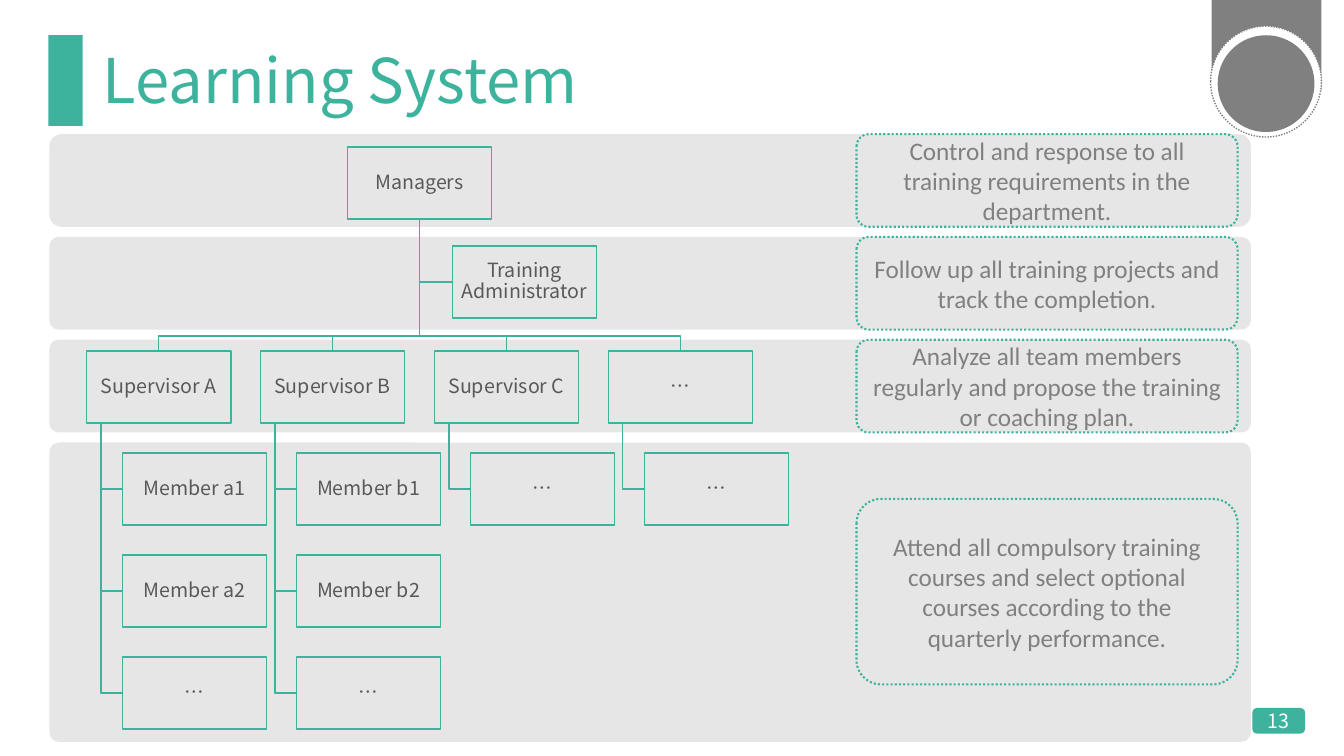
from pptx import Presentation
from pptx.dml.color import RGBColor
from pptx.enum.dml import MSO_LINE
from pptx.enum.shapes import MSO_SHAPE
from pptx.enum.text import MSO_ANCHOR, PP_ALIGN
from pptx.oxml import parse_xml
from pptx.oxml.ns import nsdecls
from pptx.util import Pt

# Content
TITLE = "Learning System"
PAGE_NUMBER = "13"
MANAGER = "Managers"
ADMINISTRATOR = "Training Administrator"
TEAMS = [
    ("Supervisor A", ["Member a1", "Member a2", "…"]),
    ("Supervisor B", ["Member b1", "Member b2", "…"]),
    ("Supervisor C", ["…"]),
    ("…", ["…"]),
]
DUTIES = [
    "Control and response to all training requirements in the department.",
    "Follow up all training projects and track the completion.",
    "Analyze all team members regularly and propose the training or coaching plan.",
    "Attend all compulsory training courses and select optional courses "
    "according to the quarterly performance.",
]

# Style
TEAL = RGBColor(0x3D, 0xB3, 0x9E)
GRAY = RGBColor(0x80, 0x80, 0x80)
DARK = RGBColor(0x59, 0x59, 0x59)
BAND = RGBColor(0xE7, 0xE6, 0xE6)
WHITE = RGBColor(0xFF, 0xFF, 0xFF)
NOTO, CALIBRI = "Noto Sans CJK SC", "Calibri"

# Layout, in points
BAND_LEFT, BAND_TOP, BAND_W, BAND_H, BAND_PITCH = 35.3, 95.8, 858.2, 66.2, 73.44
LAST_BAND_H = 213.8
DUTY_LEFT, DUTY_W, LAST_DUTY_TOP, LAST_DUTY_H = 611.8, 272.2, 356.4, 132.5
BOX_W, BOX_H = 103, 51.4
MANAGER_LEFT, MANAGER_TOP = 248.2, 105.1
ADMIN_LEFT, ADMIN_TOP = 323.2, 175.7
TEAM_LEFT, TEAM_TOP, TEAM_PITCH = 61.9, 250.7, 124.2
MEMBER_INDENT, MEMBER_TOP, MEMBER_PITCH = 25.7, 323.6, 72.9
STEM_INDENT, BUS_Y = 10.3, 239.9

prs = Presentation()
prs.slide_width, prs.slide_height = Pt(960), Pt(540)
slide = prs.slides.add_slide(prs.slide_layouts[5])


def set_font(paragraph, face, size, color):
    for run in paragraph.runs:
        run.font.name, run.font.size = face, Pt(size)
        run.font.color.rgb = color
        latin = run.font._element.find("{*}latin")
        latin.addnext(parse_xml(f'<a:ea {nsdecls("a")} typeface="{face}"/>'))


def style_outline(part, line, width=1.0, dash=None):
    part.shadow.inherit = False
    if line is None:
        part.line.fill.background()
        return
    part.line.color.rgb, part.line.width = line, Pt(width)
    if dash:
        part.line.dash_style = dash


def add_part(kind, left, top, width, height, fill=None, line=None,
             line_width=1.0, dash=None, corner=None):
    part = slide.shapes.add_shape(kind, Pt(left), Pt(top), Pt(width), Pt(height))
    if corner is not None:
        part.adjustments[0] = corner
    if fill is None:
        part.fill.background()
    else:
        part.fill.solid()
        part.fill.fore_color.rgb = fill
    style_outline(part, line, line_width, dash)
    return part


def write(part, text, face, size, color, inset=None, spacing=None):
    frame = part.text_frame
    frame.text = text
    frame.word_wrap, frame.vertical_anchor = True, MSO_ANCHOR.MIDDLE
    if inset is not None:
        frame.margin_left = frame.margin_right = Pt(inset)
        frame.margin_top = frame.margin_bottom = Pt(inset)
    paragraph = frame.paragraphs[0]
    paragraph.alignment = PP_ALIGN.CENTER
    if spacing:
        paragraph.line_spacing = spacing
    set_font(paragraph, face, size, color)


def add_role(text, left, top):
    role = add_part(MSO_SHAPE.RECTANGLE, left, top, BOX_W, BOX_H, line=TEAL)
    write(role, text, NOTO, 14, DARK, inset=0.7, spacing=0.9)


def add_branch(*points):
    corners = [(Pt(x), Pt(y)) for x, y in points]
    builder = slide.shapes.build_freeform(*corners[0])
    builder.add_line_segments(corners[1:], close=False)
    branch = builder.convert_to_shape()
    branch.fill.background()
    style_outline(branch, TEAL)


# Page furniture
badge = add_part(MSO_SHAPE.ROUNDED_RECTANGLE, 895, 506.2, 36.7, 17.3, TEAL, TEAL)
write(badge, PAGE_NUMBER, NOTO, 14, WHITE, inset=0)
add_part(MSO_SHAPE.RECTANGLE, 34.6, 25.2, 24.5, 64.8, TEAL)
add_part(MSO_SHAPE.RECTANGLE, 865.4, -0.7, 78.5, 65.5, GRAY)
add_part(MSO_SHAPE.OVAL, 864.7, 18.7, 79.2, 79.2, WHITE, GRAY, dash=MSO_LINE.ROUND_DOT)
add_part(MSO_SHAPE.OVAL, 869.8, 25.2, 69.1, 69.1, GRAY)

# Level bands
last = len(DUTIES) - 1
band_tops = [BAND_TOP + i * BAND_PITCH for i in range(len(DUTIES))]
for i, (top, corner) in enumerate(zip(band_tops, (0.132, 0.098, 0.098, 0.033))):
    height = LAST_BAND_H if i == last else BAND_H
    add_part(MSO_SHAPE.ROUNDED_RECTANGLE, BAND_LEFT, top, BAND_W, height,
             BAND, corner=corner)

# Title
title = slide.shapes.title
title.left, title.top, title.width, title.height = Pt(66.2), Pt(28.8), Pt(828), Pt(61.2)
write(title, TITLE, NOTO, 44, TEAL, spacing=0.9)
title.text_frame.paragraphs[0].alignment = PP_ALIGN.LEFT

# Organisation chart: branches first, boxes above them
trunk_x, trunk_y = MANAGER_LEFT + BOX_W / 2, MANAGER_TOP + BOX_H
admin_y = ADMIN_TOP + BOX_H / 2
add_branch((trunk_x, trunk_y), (trunk_x, admin_y), (ADMIN_LEFT, admin_y))
roles = [(MANAGER, MANAGER_LEFT, MANAGER_TOP), (ADMINISTRATOR, ADMIN_LEFT, ADMIN_TOP)]
for column, (supervisor, members) in enumerate(TEAMS):
    left = TEAM_LEFT + column * TEAM_PITCH
    center, stem = left + BOX_W / 2, left + STEM_INDENT
    add_branch((trunk_x, trunk_y), (trunk_x, BUS_Y), (center, BUS_Y), (center, TEAM_TOP))
    roles.append((supervisor, left, TEAM_TOP))
    for row, member in enumerate(members):
        member_left, top = left + MEMBER_INDENT, MEMBER_TOP + row * MEMBER_PITCH
        middle = top + BOX_H / 2
        add_branch((stem, TEAM_TOP + BOX_H), (stem, middle), (member_left, middle))
        roles.append((member, member_left, top))
for role in roles:
    add_role(*role)

# Duties of each level
for i, (duty, band_top) in enumerate(zip(DUTIES, band_tops)):
    top, height = (LAST_DUTY_TOP, LAST_DUTY_H) if i == last else (band_top, BAND_H)
    callout = add_part(MSO_SHAPE.ROUNDED_RECTANGLE, DUTY_LEFT, top, DUTY_W, height,
                       line=TEAL, line_width=1.5, dash=MSO_LINE.ROUND_DOT, corner=0.132)
    write(callout, duty, CALIBRI, 18, GRAY)

prs.save("out.pptx")
